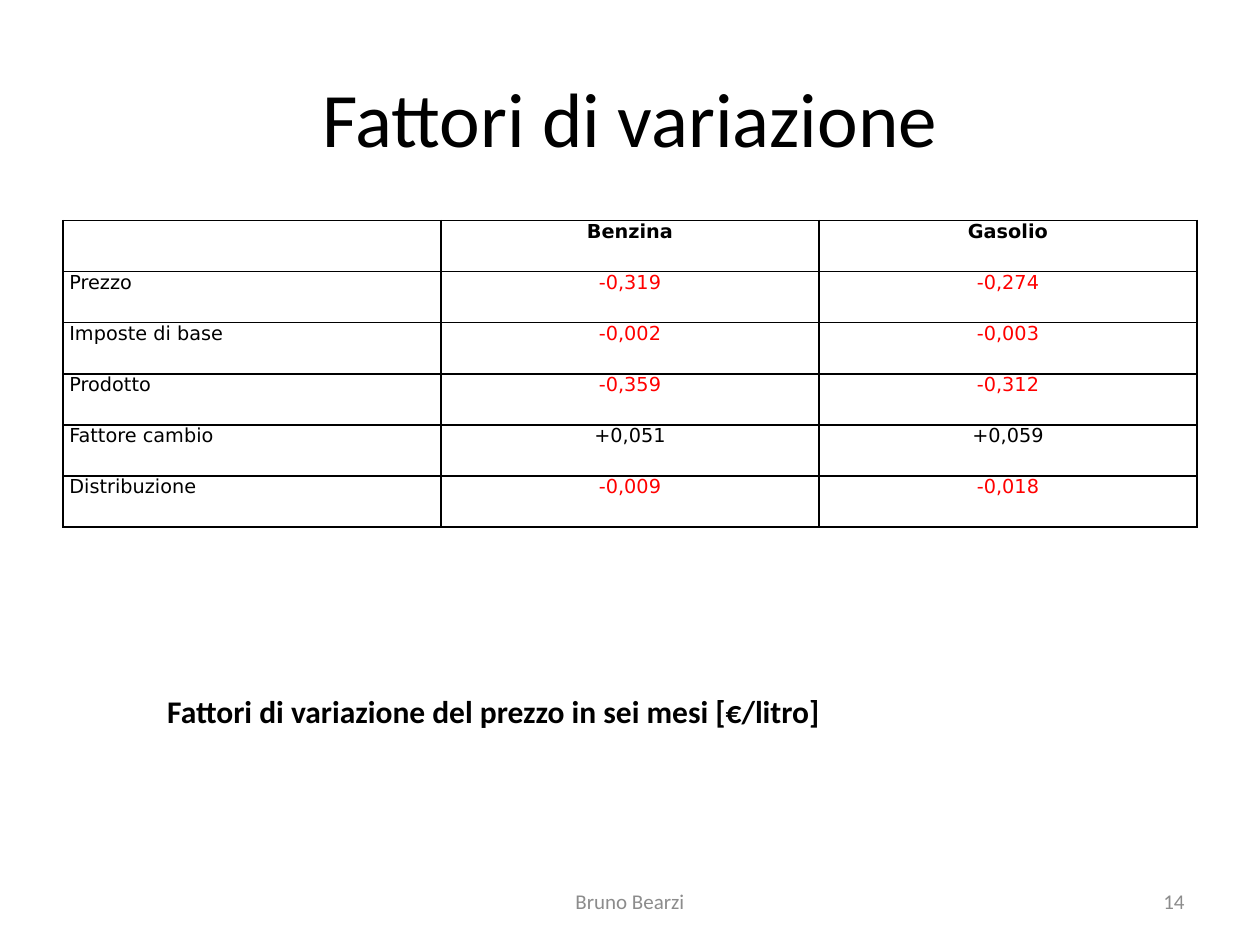
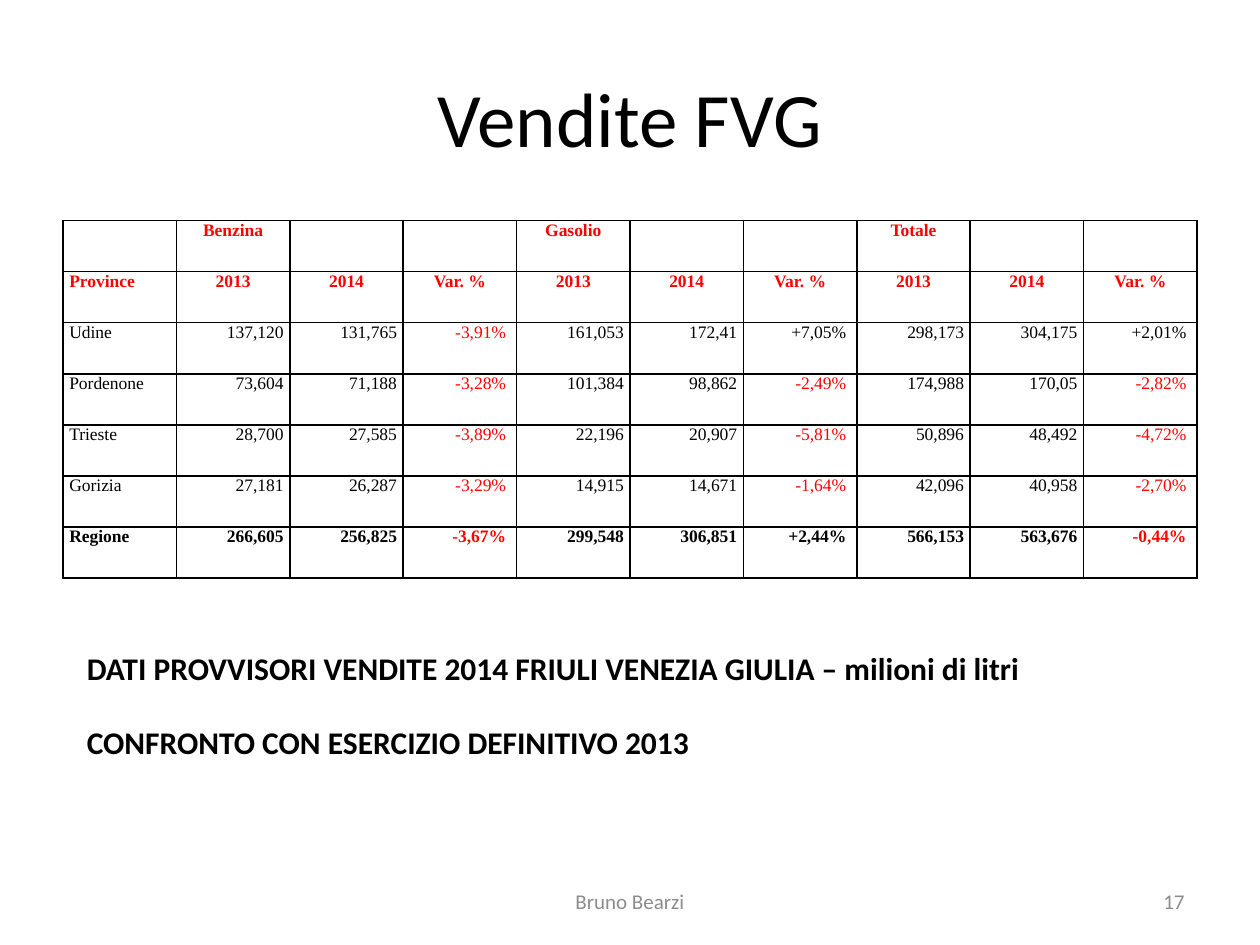
import lxml.etree
import pptx
import pptx.dml.color
import pptx.enum.text
import pptx.oxml.ns
import pptx.util

Pt = pptx.util.Pt
ALIGN = pptx.enum.text.PP_ALIGN
ANCHOR = pptx.enum.text.MSO_ANCHOR
BLACK, RED, GREY = "000000", "FF0000", "8C8C8C"
BODY_FONT = "Calibri"
TITLE_BOX = (36, 21.6, 648, 90)
AUTHOR_BOX = (246, 500.4, 228, 28.8)
NUMBER_BOX = (516, 500.4, 168, 28.8)
TABLE_LEFT, TABLE_TOP, TABLE_WIDTH, ROW_HEIGHT = 36, 126, 648, 29.2

FACTORS = [
    ["", "Benzina", "Gasolio"],
    ["Prezzo", "-0,319", "-0,274"],
    ["Imposte di base", "-0,002", "-0,003"],
    ["Prodotto", "-0,359", "-0,312"],
    ["Fattore cambio", "+0,051", "+0,059"],
    ["Distribuzione", "-0,009", "-0,018"],
]
SALES = [
    ["", "Benzina", "", "", "Gasolio", "", "", "Totale", "", ""],
    ["Province"] + ["2013", "2014", "Var. %"] * 3,
    ["Udine", "137,120", "131,765", "-3,91% ", "161,053", "172,41", "+7,05% ", "298,173", "304,175", "+2,01% "],
    ["Pordenone", "73,604", "71,188", "-3,28% ", "101,384", "98,862", "-2,49% ", "174,988", "170,05", "-2,82% "],
    ["Trieste", "28,700", "27,585", "-3,89% ", "22,196", "20,907", "-5,81% ", "50,896", "48,492", "-4,72% "],
    ["Gorizia", "27,181", "26,287", "-3,29% ", "14,915", "14,671", "-1,64% ", "42,096", "40,958", "-2,70% "],
    ["Regione", "266,605", "256,825", "-3,67% ", "299,548", "306,851", "+2,44% ", "566,153", "563,676", "-0,44% "],
]


def rgb(hex_colour):
    """Turn a hex string into a colour."""
    return pptx.dml.color.RGBColor.from_string(hex_colour)


def write(paragraph, words, size, font, colour=BLACK, bold=False, align=ALIGN.LEFT):
    """Add one styled run to a paragraph."""
    paragraph.alignment = align
    run = paragraph.add_run()
    run.text = words
    run.font.size = Pt(size)
    run.font.name = font
    run.font.bold = bold
    run.font.color.rgb = rgb(colour)


def add_text(slide, box, lines, size, gap=0, anchor=ANCHOR.TOP, **style):
    """Place a wrapped text box with one paragraph for each line."""
    frame = slide.shapes.add_textbox(*map(Pt, box)).text_frame
    frame.word_wrap = True
    frame.vertical_anchor = anchor
    for index, line in enumerate(lines):
        paragraph = frame.add_paragraph() if index else frame.paragraphs[0]
        paragraph.space_before = Pt(gap if index else 0)
        write(paragraph, line, size, BODY_FONT, **style)


def add_frame(slide, title, number):
    """Place the title, the author and the slide number."""
    add_text(slide, TITLE_BOX, [title], 44, anchor=ANCHOR.MIDDLE, align=ALIGN.CENTER)
    for box, words, align in ((NUMBER_BOX, number, ALIGN.RIGHT), (AUTHOR_BOX, "Bruno Bearzi", ALIGN.CENTER)):
        add_text(slide, box, [words], 12, anchor=ANCHOR.MIDDLE, colour=GREY, align=align)


def rule_cell(cell):
    """Draw a thin black border on every side of a cell."""
    qn = pptx.oxml.ns.qn
    properties = cell._tc.get_or_add_tcPr()
    for position, side in enumerate(("lnL", "lnR", "lnT", "lnB")):
        border = lxml.etree.Element(qn("a:" + side), w=str(Pt(1)))
        fill = lxml.etree.SubElement(border, qn("a:solidFill"))
        lxml.etree.SubElement(fill, qn("a:srgbClr"), val=BLACK)
        properties.insert(position, border)


def add_grid(slide, rows, size, font, header_rows, header_colour, value_align, bold_total=False):
    """Place a ruled table with equal columns and negative values in red."""
    box = (TABLE_LEFT, TABLE_TOP, TABLE_WIDTH, ROW_HEIGHT * len(rows))
    grid = slide.shapes.add_table(len(rows), len(rows[0]), *map(Pt, box)).table
    grid.first_row = grid.horz_banding = False
    for row_index, row in enumerate(rows):
        is_header = row_index < header_rows
        bold = is_header or (bold_total and row_index == len(rows) - 1)
        for column, words in enumerate(row):
            cell = grid.cell(row_index, column)
            cell.margin_left = cell.margin_right = Pt(3.6)
            cell.margin_top = cell.margin_bottom = Pt(0)
            cell.fill.background()
            rule_cell(cell)
            if not words:
                continue
            colour = header_colour if is_header else RED if words.startswith("-") else BLACK
            align = ALIGN.LEFT if column == 0 else ALIGN.CENTER if is_header else value_align
            write(cell.text_frame.paragraphs[0], words, size, font, colour, bold, align)


def build_factors(slide):
    """Build the slide on the factors behind the price change."""
    add_frame(slide, "Fattori di variazione", "14")
    add_grid(slide, FACTORS, 11, "DejaVu Sans", 1, BLACK, ALIGN.CENTER)
    caption = ["Fattori di variazione del prezzo in sei mesi [€/litro]"]
    add_text(slide, (88.5, 391.7, 565, 29), caption, 18, bold=True)


def build_sales(slide):
    """Build the slide on fuel sales by province."""
    add_frame(slide, "Vendite FVG", "17")
    add_grid(slide, SALES, 10, "Times New Roman", 2, RED, ALIGN.RIGHT, bold_total=True)
    caption = [
        "DATI PROVVISORI VENDITE 2014 FRIULI VENEZIA GIULIA – milioni di litri",
        "CONFRONTO CON ESERCIZIO DEFINITIVO 2013",
    ]
    add_text(slide, (42.5, 367.2, 641.5, 72.7), caption, 18, gap=21, bold=True)


def main():
    """Build and save the deck."""
    deck = pptx.Presentation()
    deck.slide_width, deck.slide_height = Pt(720), Pt(540)
    for build in (build_factors, build_sales):
        build(deck.slides.add_slide(deck.slide_layouts[6]))
    deck.save("out.pptx")


if __name__ == "__main__":
    main()
